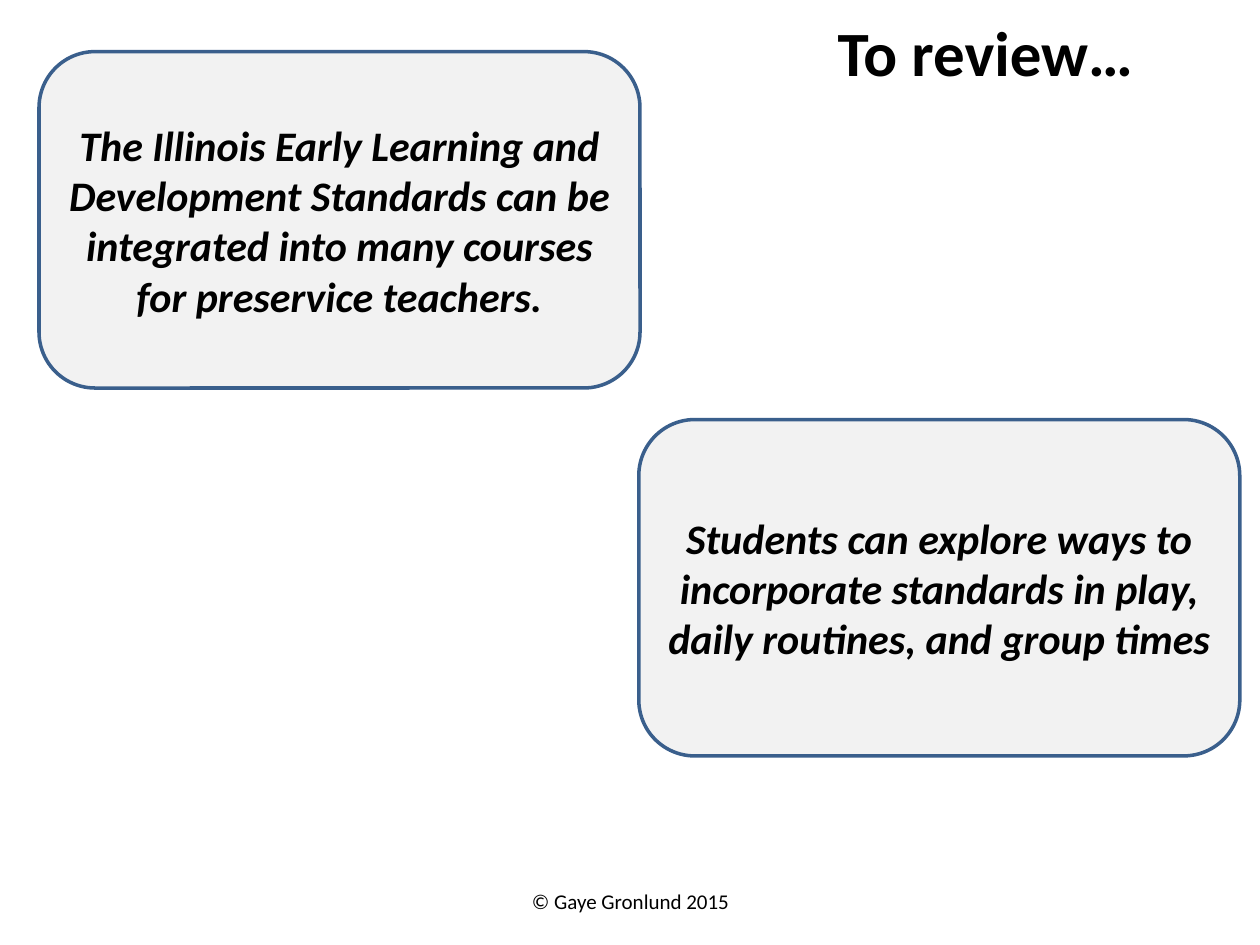
from dataclasses import dataclass

from pptx import Presentation
from pptx.dml.color import RGBColor
from pptx.enum.shapes import MSO_SHAPE as Shape
from pptx.enum.text import MSO_ANCHOR as Anchor, MSO_AUTO_SIZE as AutoSize, PP_ALIGN as Align
from pptx.slide import Slide
from pptx.text.text import TextFrame
from pptx.util import Inches, Pt

BLACK = RGBColor(0x00, 0x00, 0x00)
PALE_GREY = RGBColor(0xF2, 0xF2, 0xF2)
BLUE = RGBColor(0x3A, 0x5F, 0x8C)
FONT = "Calibri"
WIDTH, HEIGHT = 10, 7.5
CARD_W, CARD_H = 4.77, 2.67


@dataclass(frozen=True)
class Card:
    left: float
    top: float
    text: str


@dataclass(frozen=True)
class Label:
    left: float
    top: float
    width: float
    height: float
    text: str
    size: int
    bold: bool
    align: Align
    anchor: Anchor
    wrap: bool


CARDS = [
    Card(0.31, 0.41, "The Illinois Early Learning and Development Standards "
                     "can be integrated into many courses for preservice teachers."),
    Card(5.07, 3.33, "Students can explore ways to incorporate standards in play, "
                     "daily routines, and group times"),
]
LABELS = [
    Label(3.42, 6.95, 3.17, 0.4, "© Gaye Gronlund 2015", 12, False,
          Align.CENTER, Anchor.MIDDLE, True),
    Label(6.55, 0.06, 2.57, 0.71, "To review…", 36, True,
          Align.LEFT, Anchor.TOP, False),
]


def write(tf: TextFrame, text: str, size: int, bold: bool, italic: bool, align: Align) -> None:
    p = tf.paragraphs[0]
    p.alignment = align
    r = p.add_run()
    r.text = text
    r.font.name = FONT
    r.font.size = Pt(size)
    r.font.bold = bold
    r.font.italic = italic
    r.font.color.rgb = BLACK


def draw_label(s: Slide, label: Label) -> None:
    box = (label.left, label.top, label.width, label.height)
    tf = s.shapes.add_textbox(*map(Inches, box)).text_frame
    tf.word_wrap = label.wrap
    tf.auto_size = AutoSize.NONE if label.wrap else AutoSize.SHAPE_TO_FIT_TEXT
    tf.vertical_anchor = label.anchor
    write(tf, label.text, label.size, label.bold, False, label.align)


def draw_card(s: Slide, card: Card) -> None:
    box = (card.left, card.top, CARD_W, CARD_H)
    sp = s.shapes.add_shape(Shape.ROUNDED_RECTANGLE, *map(Inches, box))
    sp.shadow.inherit = False
    sp.fill.solid()
    sp.fill.fore_color.rgb = PALE_GREY
    sp.line.color.rgb = BLUE
    sp.line.width = Pt(2)
    tf = sp.text_frame
    tf.word_wrap = True
    tf.vertical_anchor = Anchor.MIDDLE
    write(tf, card.text, 24, True, True, Align.CENTER)


def main() -> None:
    prs = Presentation()
    prs.slide_width, prs.slide_height = Inches(WIDTH), Inches(HEIGHT)
    s = prs.slides.add_slide(prs.slide_layouts[6])
    for label in LABELS:
        draw_label(s, label)
    for card in CARDS:
        draw_card(s, card)
    prs.save("out.pptx")


if __name__ == "__main__":
    main()
